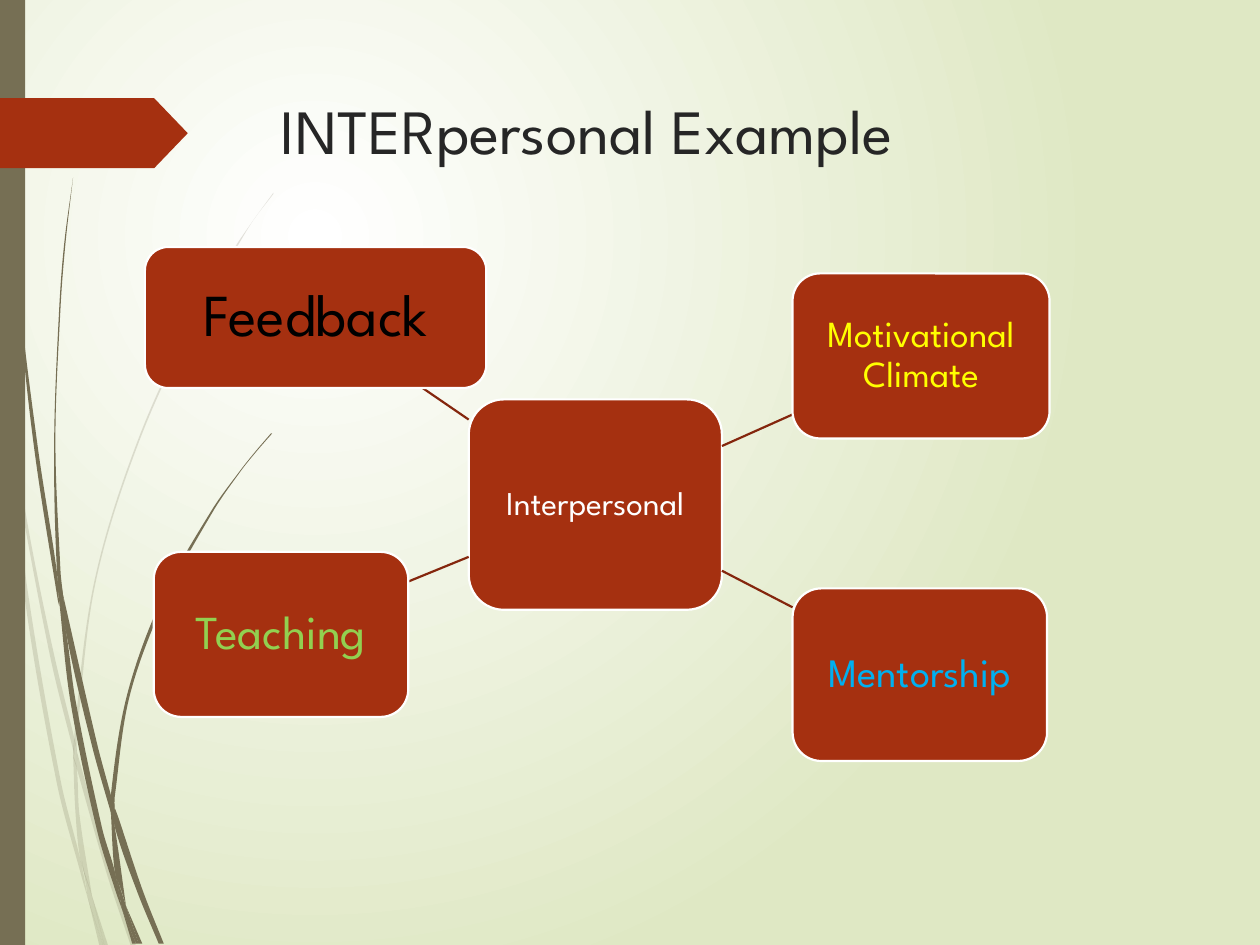
from dataclasses import dataclass
from math import dist

from lxml.etree import SubElement
from pptx import Presentation
from pptx.dml.color import RGBColor
from pptx.enum.shapes import MSO_CONNECTOR, MSO_SHAPE
from pptx.enum.text import MSO_ANCHOR, PP_ALIGN
from pptx.oxml import parse_xml
from pptx.oxml.ns import nsdecls, qn
from pptx.util import Inches, Pt

# The slide is a grid of square cells; every length below counts cells.
COLUMNS, ROWS = 1000, 750
CELL = Inches(10) // COLUMNS
FONT = "League Spartan"
OLIVE, RUST, DARK_RUST, WHITE = "766F54", "A53010", "84260D", "FFFFFF"

Point = tuple[float, float]
Edge = list[Point]


@dataclass
class Node:
    label: str
    box: tuple[int, int, int, int]
    size: int
    color: str
    inset: int
    link: tuple[int, int, int, int] | None = None


@dataclass
class Blade:
    """A sliver of grass between two smooth edges that run downwards."""
    left: Edge
    right: Edge


NODES = [
    Node("Interpersonal", (372, 317, 201, 167), 19, WHITE, 5),
    Node("Feedback", (115, 196, 271, 112), 34, "000000", 9, (372, 333, 334, 307)),
    Node("Motivational Climate", (629, 217, 204, 131), 21, "FFFF00", 6, (573, 354, 629, 329)),
    Node("Mentorship", (629, 467, 202, 137), 23, "00B0F0", 6, (573, 453, 629, 482)),
    Node("Teaching", (122, 438, 202, 131), 27, "92D050", 7, (372, 442, 323, 462)),
]

FAINT_BLADES = [
    Blade([(0, 282), (6, 322), (8, 350)], [(0, 299), (7, 344), (8, 350)]),
    Blade([(10, 345), (25, 433), (43, 520), (59, 586)],
          [(12, 376), (40, 522), (59, 599)]),
    Blade([(61, 596), (64, 607), (88, 692), (108, 751)],
          [(61, 610), (85, 694), (104, 751)]),
    Blade([(73, 711), (86, 751)], [(73, 711), (83, 751)]),
    Blade([(8, 350), (12, 376), (22, 469), (48, 619), (64, 683), (70, 714)],
          [(8, 350), (19, 470), (45, 621), (64, 693), (70, 714)]),
    Blade([(58, 599), (61, 610), (63, 646), (73, 711)],
          [(58, 599), (60, 646), (64, 683), (73, 711)]),
    Blade([(217, 153), (201, 175), (186, 197), (158, 244), (110, 348), (75, 461),
           (59, 584), (61, 596)],
          [(217, 154), (201, 175), (187, 198), (159, 245), (111, 349), (76, 462),
           (61, 584), (61, 596)]),
    Blade([(70, 714), (79, 751)], [(70, 714), (82, 751)]),
    Blade([(59, 586), (58, 599), (61, 610)], [(59, 586), (61, 596), (61, 610)]),
    Blade([(65, 683), (67, 692), (73, 711), (83, 751)],
          [(65, 683), (69, 707), (70, 714), (82, 751)]),
]

SOLID_BLADES = [
    Blade([(2, 0), (3, 48), (5, 110), (14, 233), (27, 355), (46, 477), (47, 481)],
          [(3, 0), (4, 48), (6, 109), (15, 232), (30, 355), (45, 453), (47, 481)]),
    Blade([(50, 472), (77, 590), (88, 631)],
          [(50, 472), (53, 505), (73, 592), (88, 645)]),
    Blade([(91, 641), (94, 649), (113, 706), (130, 749)],
          [(91, 641), (91, 656), (109, 708), (126, 749)]),
    Blade([(47, 477), (53, 505), (60, 556), (81, 657), (91, 691), (97, 722)],
          [(47, 477), (56, 557), (77, 659), (92, 708), (97, 722)]),
    Blade([(58, 141), (52, 193), (48, 245), (44, 349), (48, 453), (50, 472)],
          [(58, 141), (51, 193), (47, 245), (43, 349), (45, 449), (49, 472)]),
    Blade([(100, 719), (113, 749)], [(100, 719), (110, 749)]),
    Blade([(45, 449), (50, 472), (53, 505)], [(45, 449), (47, 477), (53, 505)]),
    Blade([(216, 344), (203, 359), (191, 374), (169, 406), (131, 476), (103, 552),
           (91, 633), (91, 641)],
          [(215, 344), (203, 358), (191, 373), (168, 405), (129, 474), (101, 551),
           (88, 631), (91, 641)]),
    Blade([(97, 722), (108, 749)], [(97, 722), (105, 749)]),
    Blade([(88, 645), (91, 656), (100, 719)],
          [(88, 645), (91, 691), (96, 706), (100, 719)]),
    Blade([(88, 631), (91, 641), (91, 656)], [(88, 631), (88, 645), (91, 656)]),
    Blade([(91, 691), (100, 719), (110, 749)],
          [(91, 691), (96, 717), (97, 722), (108, 749)]),
]


def rgb(color: str) -> RGBColor:
    return RGBColor.from_string(color)


def cells(*counts: float) -> list[int]:
    return [round(count * CELL) for count in counts]


def smooth(edge: Edge) -> Edge:
    """Give two control points and an end point for each step along an edge."""
    last = len(edge) - 1
    slopes = []
    for i in range(last + 1):
        before, after = max(i - 1, 0), min(i + 1, last)
        length = sum(dist(edge[j], edge[j + 1]) for j in range(before, after))
        slopes.append([(b - a) / length for a, b in zip(edge[before], edge[after])])
    curve = []
    for i in range(last):
        start, end = edge[i], edge[i + 1]
        reach = dist(start, end) / 3
        curve += [tuple(a + m * reach for a, m in zip(start, slopes[i])),
                  tuple(b - m * reach for b, m in zip(end, slopes[i + 1])),
                  end]
    return curve


def paint(shape, fill: str, line: str | None = None) -> None:
    shape.shadow.inherit = False
    shape.fill.solid()
    shape.fill.fore_color.rgb = rgb(fill)
    if line:
        shape.line.color.rgb = rgb(line)
        shape.line.width = Pt(1.25)
    else:
        shape.line.fill.background()


def add_run(paragraph, text: str, size: int, color: str) -> None:
    run = paragraph.add_run()
    run.text = text
    run.font.name = FONT
    run.font.size = Pt(size)
    run.font.color.rgb = rgb(color)


def paint_background(slide) -> None:
    fill = slide.background.fill
    fill.gradient()
    for stop, color in zip(fill.gradient_stops, (WHITE, "DFE8C4")):
        stop.color.rgb = rgb(color)
    linear = slide.background._cSld.find(f".//{qn('a:lin')}")
    linear.getparent().replace(linear, parse_xml(
        f'<a:path {nsdecls("a")} path="circle">'
        '<a:fillToRect l="50000" t="50000" r="100000" b="100000"/></a:path>'))


def bend_lines(shape) -> None:
    """Turn each three lines of a freeform into one cubic curve."""
    outline = shape._element.find(f".//{qn('a:path')}")
    lines = outline.findall(qn("a:lnTo"))
    for i in range(0, len(lines), 3):
        curve = parse_xml(f"<a:cubicBezTo {nsdecls('a')}/>")
        lines[i].addprevious(curve)
        for line in lines[i:i + 3]:
            curve.append(line[0])
            outline.remove(line)


def add_blade(slide, blade: Blade, opacity: int = 100) -> None:
    tip, foot = blade.left[-1], blade.right[-1]
    join = [tip, foot, foot] if tip != foot else []
    points = smooth(blade.left) + join + smooth(blade.right[::-1])
    builder = slide.shapes.build_freeform(*cells(*blade.left[0]))
    builder.add_line_segments([cells(*point) for point in points], close=True)
    shape = builder.convert_to_shape()
    bend_lines(shape)
    paint(shape, OLIVE)
    if opacity < 100:
        color = shape._element.spPr.find(f"{qn('a:solidFill')}/{qn('a:srgbClr')}")
        SubElement(color, qn("a:alpha"), val=str(opacity * 1000))


def add_node(slide, node: Node) -> None:
    if node.link:
        link = slide.shapes.add_connector(MSO_CONNECTOR.STRAIGHT, *cells(*node.link))
        link.line.color.rgb = rgb(DARK_RUST)
        link.line.width = Pt(1.25)
        SubElement(link._element.spPr, qn("a:effectLst"))
    shape = slide.shapes.add_shape(MSO_SHAPE.ROUNDED_RECTANGLE, *cells(*node.box))
    paint(shape, RUST, WHITE)
    frame = shape.text_frame
    frame.word_wrap = True
    frame.vertical_anchor = MSO_ANCHOR.MIDDLE
    inset = node.inset * CELL
    frame.margin_left = frame.margin_right = frame.margin_top = frame.margin_bottom = inset
    paragraph = frame.paragraphs[0]
    paragraph.alignment = PP_ALIGN.CENTER
    paragraph.line_spacing = 0.9
    add_run(paragraph, node.label, node.size, node.color)


def main() -> None:
    presentation = Presentation()
    presentation.slide_width, presentation.slide_height = cells(COLUMNS, ROWS)
    slide = presentation.slides.add_slide(presentation.slide_layouts[6])
    paint_background(slide)
    for blades, opacity in ((FAINT_BLADES, 20), (SOLID_BLADES, 100)):
        for blade in blades:
            add_blade(slide, blade, opacity)
    paint(slide.shapes.add_shape(MSO_SHAPE.RECTANGLE, *cells(0, 0, 20, ROWS)), OLIVE)
    arrow = slide.shapes.add_shape(MSO_SHAPE.PENTAGON, *cells(0, 78, 149, 55.5))
    arrow.adjustments[0] = 0.48
    paint(arrow, RUST)
    title = slide.shapes.add_textbox(*cells(213, 68, 721, 140))
    title.text_frame.word_wrap = True
    add_run(title.text_frame.paragraphs[0], "INTERpersonal Example", 36, "262626")
    for node in NODES:
        add_node(slide, node)
    presentation.save("out.pptx")


if __name__ == "__main__":
    main()
